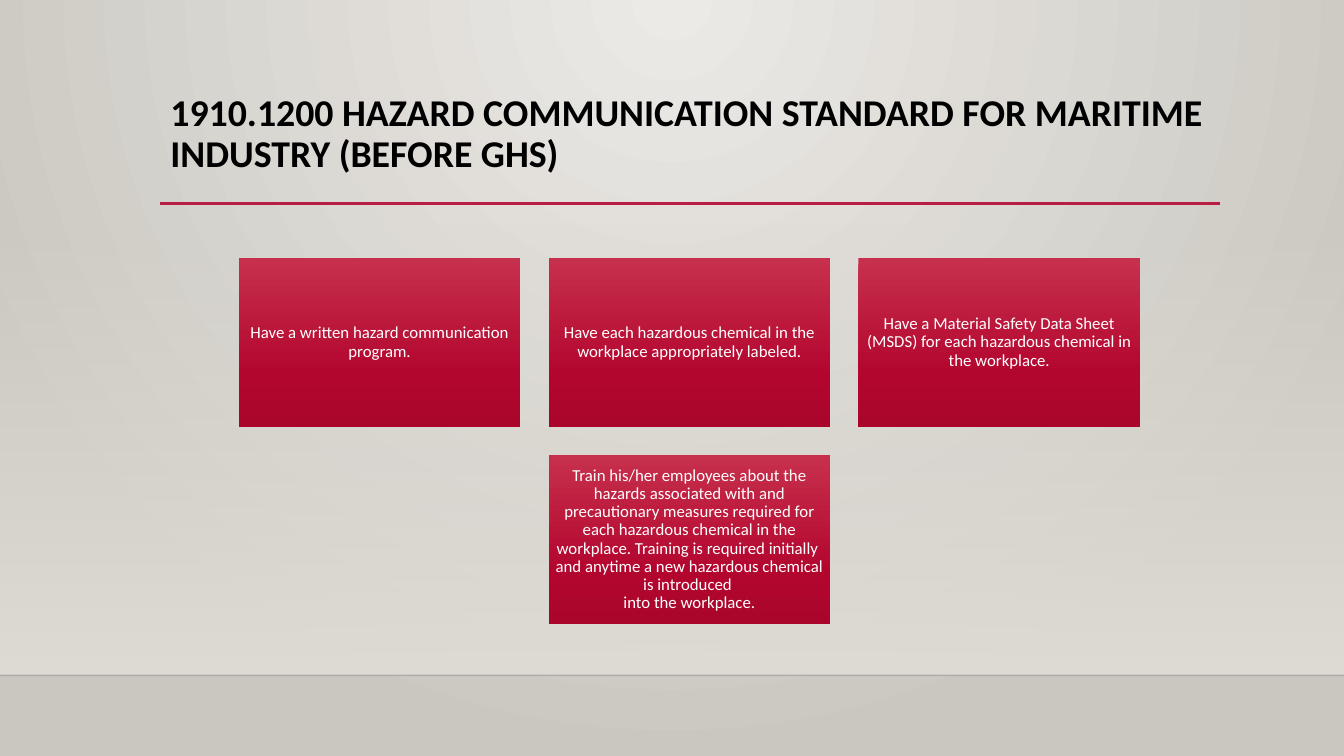
import pptx
import pptx.dml.color
import pptx.enum.shapes
import pptx.enum.text
import pptx.oxml
import pptx.oxml.ns
import pptx.util

Pt = pptx.util.Pt
RGB = pptx.dml.color.RGBColor
Align = pptx.enum.text.PP_ALIGN
Anchor = pptx.enum.text.MSO_ANCHOR
qn = pptx.oxml.ns.qn

BLACK = RGB(0, 0, 0)
WHITE = RGB(0xFF, 0xFF, 0xFF)
PALE = RGB(0xEC, 0xEA, 0xE7)
GREY = RGB(0xCA, 0xC7, 0xC1)
SAND = RGB(0xDF, 0xDB, 0xD5)
RED = RGB(0xB7, 0x1E, 0x42)
ROSE = RGB(0xC7, 0x30, 0x4C)
CRIMSON = RGB(0xB3, 0x06, 0x2F)
WINE = RGB(0xAA, 0x06, 0x2C)

FONT = "Calibri"
WIDTH, HEIGHT = 960, 540
FLOOR = 482.4
LEFT = 114.5
CARD_W, CARD_H, GAP = 201.2, 120.7, 20.1
CARD_X, CARD_Y = 170.6, 184.3

DOWN = '<a:lin ang="5400000" scaled="0"/>'
GLOW = ('<a:path path="circle"><a:fillToRect l="43000" t="0" '
        'r="43000" b="100000"/></a:path>')
CARD_FILL = [(0, ROSE, 100), (69, CRIMSON, 100), (100, WINE, 100)]

TITLE = ("1910.1200 HAZARD COMMUNICATION STANDARD FOR MARITIME "
         "INDUSTRY (BEFORE GHS)")
# Column, row and lines of text for each duty
DUTIES = [
    (0, 0, ["Have a written hazard communication program."]),
    (1, 0, ["Have each hazardous chemical in the workplace "
            "appropriately labeled."]),
    (2, 0, ["Have a Material Safety Data Sheet (MSDS) for each "
            "hazardous chemical in the workplace."]),
    (1, 1, ["Train his/her employees about the hazards associated with and "
            "precautionary measures required for each hazardous chemical in "
            "the workplace. Training is required initially ",
            "and anytime a new hazardous chemical is introduced ",
            "into the workplace."]),
]


def blend(fill, parent, stops, course):
    """Give parent a gradient of (place, colour, opacity) stops."""
    fill.background()
    marks = "".join(
        f'<a:gs pos="{place * 1000}"><a:srgbClr val="{color}">'
        f'<a:alpha val="{alpha * 1000}"/></a:srgbClr></a:gs>'
        for place, color, alpha in stops)
    grad = pptx.oxml.parse_xml(
        f'<a:gradFill {pptx.oxml.ns.nsdecls("a")} rotWithShape="1">'
        f'<a:gsLst>{marks}</a:gsLst>{course}</a:gradFill>')
    parent.replace(parent.find(qn("a:noFill")), grad)


def add_box(slide, x, y, w, h, stops):
    kind = pptx.enum.shapes.MSO_SHAPE.RECTANGLE
    box = slide.shapes.add_shape(kind, Pt(x), Pt(y), Pt(w), Pt(h))
    box.shadow.inherit = False
    box.line.fill.background()
    blend(box.fill, box._element.spPr, stops, DOWN)
    return box


def add_rule(slide, x, end, y, color, weight, alpha=100):
    kind = pptx.enum.shapes.MSO_CONNECTOR.STRAIGHT
    rule = slide.shapes.add_connector(kind, Pt(x), Pt(y), Pt(end), Pt(y))
    rule.line.color.rgb = color
    rule.line.width = Pt(weight)
    props = rule._element.spPr
    tint = props.find(".//" + qn("a:srgbClr"))
    tint.append(tint.makeelement(qn("a:alpha"), {"val": str(alpha * 1000)}))
    props.append(props.makeelement(qn("a:effectLst"), {}))


def write(frame, lines, size, color, align, anchor, bold=False):
    frame.word_wrap = True
    frame.auto_size = pptx.enum.text.MSO_AUTO_SIZE.NONE
    frame.vertical_anchor = anchor
    para = frame.paragraphs[0]
    para.alignment = align
    para.line_spacing = 0.9
    para.space_before = Pt(0)
    for i, line in enumerate(lines):
        if i:
            para.add_line_break()
        run = para.add_run()
        run.text = line
        run.font.name = FONT
        run.font.size = Pt(size)
        run.font.bold = bold
        run.font.color.rgb = color


def set_title(slide):
    title = slide.shapes.title
    title.left, title.top = Pt(LEFT), Pt(63.4)
    title.width, title.height = Pt(756), Pt(82.8)
    write(title.text_frame, [TITLE], 27, BLACK, Align.LEFT, Anchor.TOP, True)
    # Bring the title in front of the backdrop
    slide.shapes._spTree.append(title._element)


def add_card(slide, col, row, lines):
    x = CARD_X + col * (CARD_W + GAP)
    y = CARD_Y + row * (CARD_H + GAP)
    card = add_box(slide, x, y, CARD_W, CARD_H, CARD_FILL)
    frame = card.text_frame
    frame.margin_left = frame.margin_right = Pt(3.6)
    frame.margin_top = frame.margin_bottom = Pt(3.6)
    write(frame, lines, 12, WHITE, Align.CENTER, Anchor.MIDDLE)


def add_scene(slide):
    fill = slide.background.fill
    back = slide._element.find(".//" + qn("p:bgPr"))
    blend(fill, back, [(0, PALE, 100), (100, GREY, 100)], GLOW)
    add_box(slide, 0, 159.1, WIDTH, FLOOR - 159.1,
            [(0, SAND, 0), (100, SAND, 100)])
    add_rule(slide, 0, WIDTH, FLOOR, BLACK, 1, 20)
    add_rule(slide, LEFT, 871.2, 145.4, RED, 2.5)


def main():
    deck = pptx.Presentation()
    deck.slide_width, deck.slide_height = Pt(WIDTH), Pt(HEIGHT)
    slide = deck.slides.add_slide(deck.slide_layouts[5])
    add_scene(slide)
    set_title(slide)
    for col, row, lines in DUTIES:
        add_card(slide, col, row, lines)
    deck.save("out.pptx")


if __name__ == "__main__":
    main()
